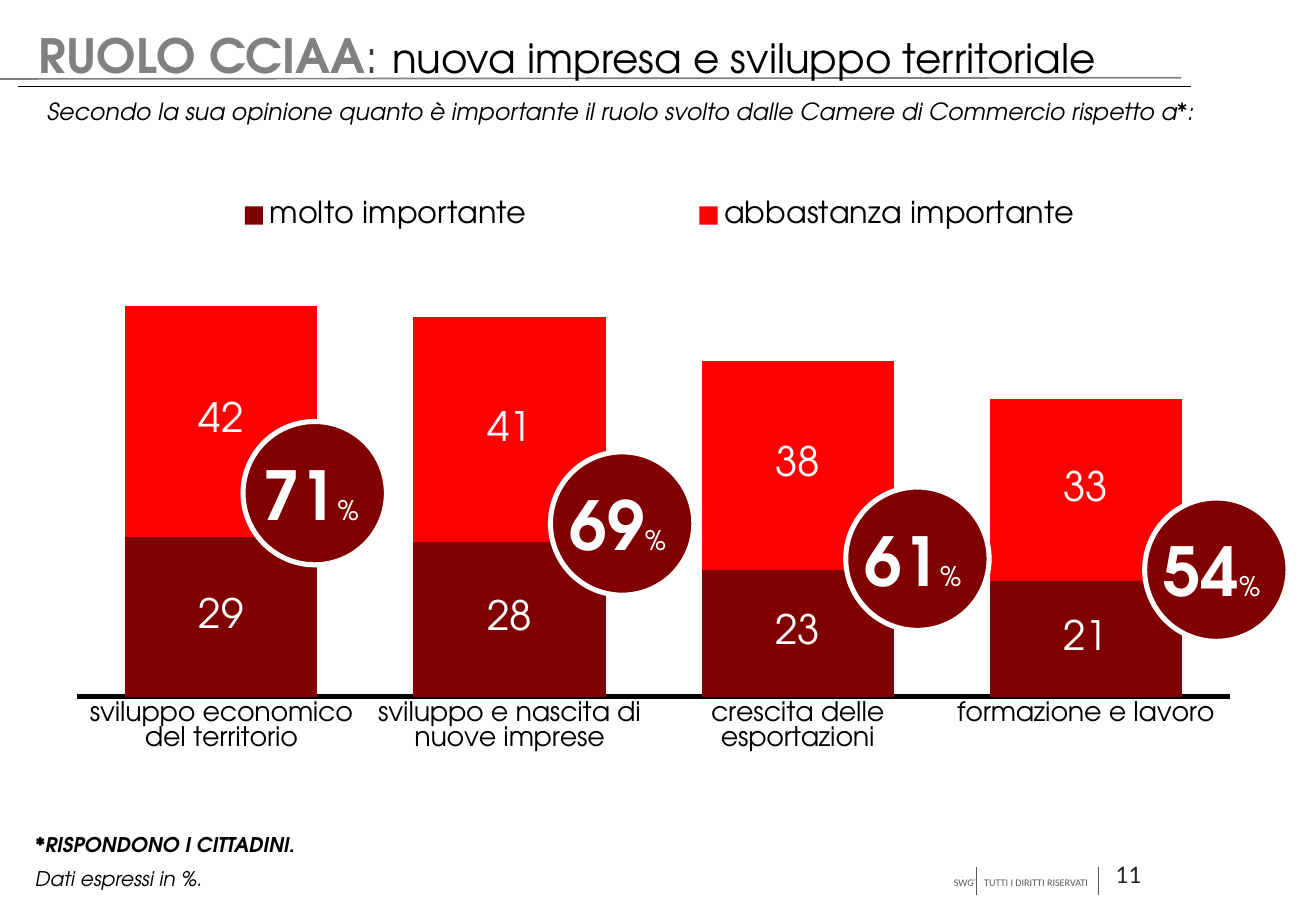
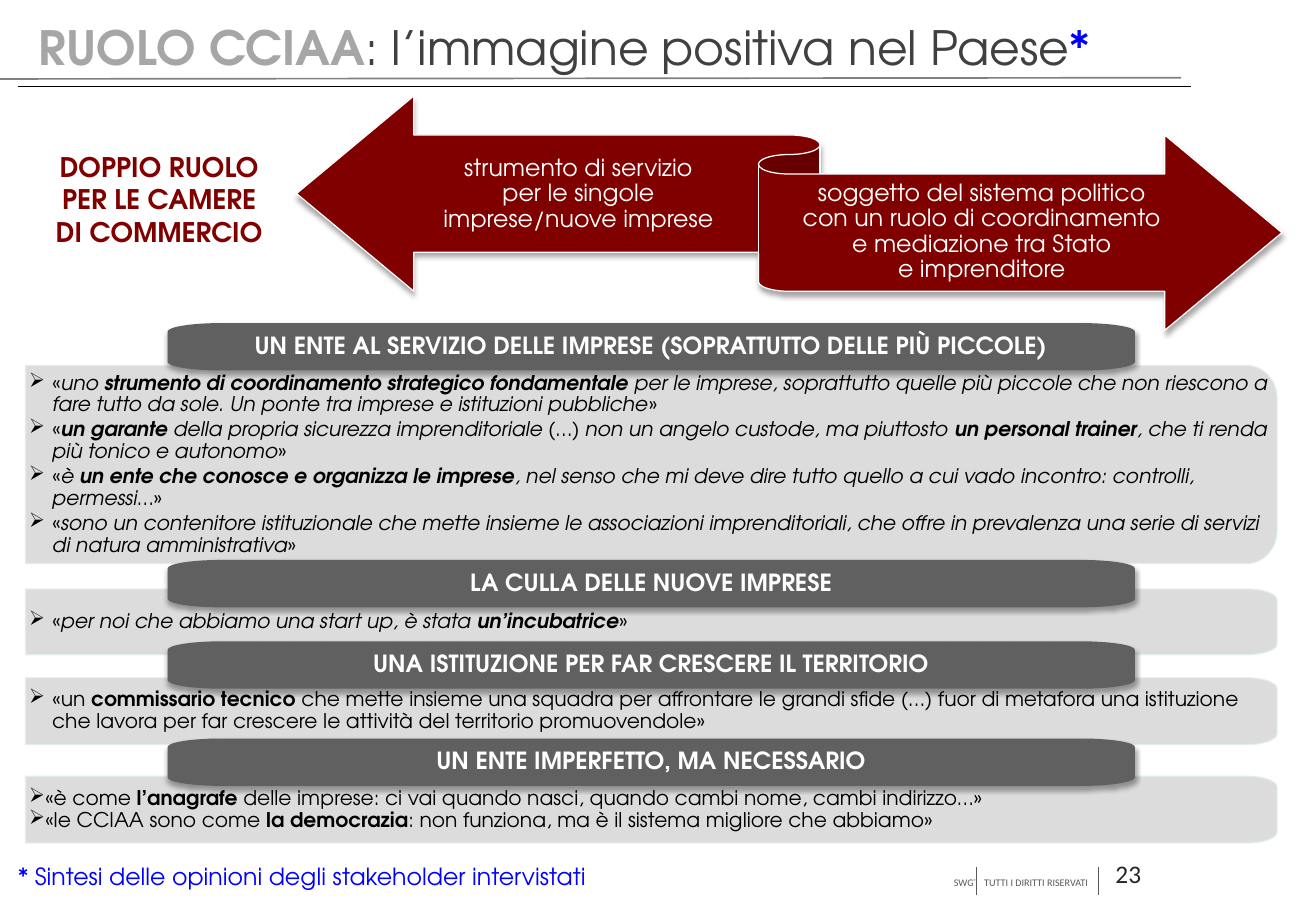
import copy

import lxml.etree
import pptx
import pptx.chart.data
import pptx.dml.color
import pptx.enum.chart
import pptx.enum.shapes
import pptx.enum.text
import pptx.oxml
import pptx.util

PX = 9144  # 100 px to the inch
FONT = "TeX Gyre Adventor"
NS = 'xmlns:a="http://schemas.openxmlformats.org/drawingml/2006/main"'
NSC = 'xmlns:c="http://schemas.openxmlformats.org/drawingml/2006/chart"'
COLORS = {"black": "000000", "white": "FFFFFF", "dark_red": "800000", "red": "FF0000",
          "blue": "0000FF", "title": "404040", "gray": "808080", "light_gray": "A6A6A6",
          "footer": "595959", "number": "262626", "heading": "606060",
          "panel": "D9D9D9", "panel_edge": "E2EEEF"}
RGB = {k: pptx.dml.color.RGBColor.from_string(v) for k, v in COLORS.items()}
ALIGN = pptx.enum.text.PP_ALIGN
ANCHOR = pptx.enum.text.MSO_ANCHOR
SHAPE = pptx.enum.shapes.MSO_SHAPE
B, I, BI = {"bold": True}, {"italic": True}, {"bold": True, "italic": True}
SHADOW = (f'<a:outerShdw {NS} blurRad="40000" dist="23000" dir="5400000" rotWithShape="0">'
          '<a:srgbClr val="000000"><a:alpha val="35000"/></a:srgbClr></a:outerShdw>')


def write(sp, paras, size, color="black", font=FONT, inset=(10, 5, 10, 5), align=ALIGN.LEFT,
          anchor=ANCHOR.TOP, spacing=None, after=0, indent=None):
    """Fill a shape with paragraphs, each a list of (text, format) runs."""
    tf = sp.text_frame
    tf.word_wrap, tf.vertical_anchor = True, anchor
    for side, px in zip(("left", "top", "right", "bottom"), inset):
        setattr(tf, "margin_" + side, px * PX)
    for i, runs in enumerate(paras):
        p = tf.paragraphs[0] if i == 0 else tf.add_paragraph()
        p.alignment, p.space_after = align, pptx.util.Pt(after)
        if spacing:
            p.line_spacing = spacing
        if indent:
            pPr = p._p.get_or_add_pPr()
            pPr.set("marL", str(indent * PX))
            pPr.set("indent", str(-19 * PX))
            pPr.append(pptx.oxml.parse_xml(f'<a:buFont {NS} typeface="Wingdings" charset="2"/>'))
            pPr.append(pptx.oxml.parse_xml(f'<a:buChar {NS} char="Ø"/>'))
        for text, fmt in runs:
            values = {"name": font, "size": size, "color": color, "bold": False,
                      "italic": False, **fmt}
            for n, line in enumerate(text.split("\n")):
                if n:
                    p.add_line_break()
                    p._p[-1].insert(0, copy.deepcopy(r._r.get_or_add_rPr()))
                r = p.add_run()
                r.text = line
                for key, value in values.items():
                    if key == "color":
                        r.font.color.rgb = RGB[value]
                    else:
                        setattr(r.font, key, pptx.util.Pt(value) if key == "size" else value)


def outline(s, x, y, w, h, rx=0, ry=0, corners=(), fill=None):
    """Draw a box whose listed corners (0 = bottom right, clockwise) are elliptical."""
    pts, curves = [], {}
    for k, (cx, cy) in enumerate([(x + w, y + h), (x, y + h), (x, y), (x + w, y)]):
        if k not in corners:
            pts.append((cx, cy))
            continue
        beside = (cx - rx if k in (0, 3) else cx + rx, cy)
        above = (cx, cy - ry if k in (0, 1) else cy + ry)
        pts += [above, beside] if k in (0, 2) else [beside, above]
        curves[len(pts) - 1] = (cx, cy)
    fb = s.shapes.build_freeform(pts[0][0] * PX, pts[0][1] * PX)
    fb.add_line_segments([(a * PX, b * PX) for a, b in pts[1:]])
    sp = fb.convert_to_shape()
    segments = list(sp._element.spPr.find(".//" + pptx.oxml.ns.qn("a:path")))
    for i, (cx, cy) in curves.items():
        (x1, y1), (x2, y2) = pts[i - 1], pts[i]
        bezier = [(x1 + 0.55 * (cx - x1), y1 + 0.55 * (cy - y1)),
                  (x2 + 0.55 * (cx - x2), y2 + 0.55 * (cy - y2)), (x2, y2)]
        marks = "".join(f'<a:pt x="{round((a - x) * PX)}" y="{round((b - y) * PX)}"/>'
                        for a, b in bezier)
        segments[i].getparent().replace(segments[i], pptx.oxml.parse_xml(
            f"<a:cubicBezTo {NS}>{marks}</a:cubicBezTo>"))
    sp.shadow.inherit = False
    sp.line.fill.background()
    if fill:
        sp.fill.solid()
        sp.fill.fore_color.rgb = RGB[fill]
    else:
        sp.fill.background()
    return sp


prs = pptx.Presentation()
prs.slide_width, prs.slide_height = 1083 * PX, 750 * PX

# Shared lines, titles and footers
titles = [
    ("11", 22, [("RUOLO CCIAA", {"color": "gray", "bold": True}), (": ", {}),
                ("nuova impresa e sviluppo territoriale", {"size": 24, "color": "black"})]),
    ("23", 15, [("RUOLO CCIAA", {"color": "light_gray", "bold": True}),
                (": l’immagine positiva nel Paese", {}), ("*", {"color": "blue"})]),
]
rules = [(15, 71, 980, 71, "black", 0.25), (0, 65, 972, 64, "gray", 1),
         (803, 714, 803, 737, "footer", 0.2), (904, 714, 904, 737, "footer", 0.2)]
slides = []
for number, top, title in titles:
    s = prs.slides.add_slide(prs.slide_layouts[6])
    slides.append(s)
    for x1, y1, x2, y2, color, width in rules:
        ln = s.shapes.add_connector(pptx.enum.shapes.MSO_CONNECTOR.STRAIGHT,
                                    x1 * PX, y1 * PX, x2 * PX, y2 * PX)
        ln.line.color.rgb, ln.line.width = RGB[color], pptx.util.Pt(width)
        lxml.etree.SubElement(ln._element.spPr, pptx.oxml.ns.qn("a:effectLst"))
    sp = s.shapes.add_textbox(758 * PX, 717 * PX, 147 * PX, 20 * PX)
    write(sp, [[("SWG", {}), ("®", {}), ("\tTUTTI I DIRITTI RISERVATI", {})]], 6, "footer",
          "Calibri", (27, 5, 0, 5))
    p = sp.text_frame.paragraphs[0]
    p.runs[1]._r.get_or_add_rPr().set("baseline", "30000")
    p._p.get_or_add_pPr().append(pptx.oxml.parse_xml(
        f'<a:tabLst {NS}><a:tab pos="{25 * PX}" algn="l"/></a:tabLst>'))
    sp = s.shapes.add_textbox(896 * PX, 702 * PX, 65 * PX, 35 * PX)
    write(sp, [[(number, {})]], 15, "number", "Calibri", align=ALIGN.CENTER)
    sp = s.shapes.add_textbox(32 * PX, top * PX, 993 * PX, 49 * PX)
    write(sp, [title], 28, "title", inset=(0, 0, 0, 0))

# Slide 1: question and notes
s = slides[0]
question = ("Secondo la sua opinione quanto è importante il ruolo svolto dalle "
            "Camere di Commercio rispetto a*:")
for x, y, w, h, text, size, fmt, inset in [
        (29, 75, 976, 34, question, 14, I, (10, 5, 10, 5)),
        (19, 708, 760, 30, "Dati espressi in %.", 12, I, (10, 5, 10, 5)),
        (29, 685, 451, 20, "*RISPONDONO I CITTADINI.", 12, BI, (0, 0, 0, 0))]:
    write(s.shapes.add_textbox(x * PX, y * PX, w * PX, h * PX), [[(text, fmt)]], size,
          inset=inset)

# Slide 1: stacked columns
cd = pptx.chart.data.CategoryChartData()
cd.categories = ["sviluppo economico del territorio", "sviluppo e nascita di nuove imprese",
                 "crescita delle esportazioni", "formazione e lavoro"]
cd.add_series("molto importante", (29, 28, 23, 21))
cd.add_series("abbastanza importante", (42, 41, 38, 33))
chart = s.shapes.add_chart(pptx.enum.chart.XL_CHART_TYPE.COLUMN_STACKED,
                           46 * PX, 144 * PX, 985 * PX, 500 * PX, cd).chart
chart.has_title = False
chart.has_legend = True
chart.legend.position = pptx.enum.chart.XL_LEGEND_POSITION.TOP
chart.legend.include_in_layout = False
plot = chart.plots[0]
plot.gap_width, plot.overlap, plot.vary_by_categories = 50, 100, False
cat, val = chart.category_axis, chart.value_axis
cat.major_tick_mark = pptx.enum.chart.XL_TICK_MARK.NONE
cat.format.line.color.rgb, cat.format.line.width = RGB["black"], pptx.util.Pt(3)
val.minimum_scale, val.maximum_scale = 0, 80
val.has_major_gridlines = val.visible = False
fonts = [(chart.font, 18, "black", "Arial"), (chart.legend.font, 18, "black", FONT),
         (cat.tick_labels.font, 16, "black", FONT)]
for series, color in zip(plot.series, ("dark_red", "red")):
    series.format.fill.solid()
    series.format.fill.fore_color.rgb = RGB[color]
    series.data_labels.show_value = True
    fonts.append((series.data_labels.font, 24, "white", FONT))
for font, size, color, name in fonts:
    font.size, font.name, font.color.rgb = pptx.util.Pt(size), name, RGB[color]

# Slide 1: manual places of plot and legend
for tag, index, target, box in [("plotArea", 0, "inner", (0.018, 0.134, 0.963, 0.725)),
                                ("legend", 1, None, (0.022, 0.012, 0.965, 0.11))]:
    el = chart._chartSpace.find(".//" + pptx.oxml.ns.qn("c:" + tag))
    for old in el.findall(pptx.oxml.ns.qn("c:layout")):
        el.remove(old)
    inner = f'<c:layoutTarget val="{target}"/>' if target else ""
    inner += '<c:xMode val="edge"/><c:yMode val="edge"/>'
    inner += "".join(f'<c:{k} val="{v}"/>' for k, v in zip("xywh", box))
    el.insert(index, pptx.oxml.parse_xml(
        f"<c:layout {NSC}><c:manualLayout>{inner}</c:manualLayout></c:layout>"))

# Slide 1: totals
for x, y, total in [(453, 372, "69"), (200, 347, "71"), (696, 401, "61"), (942, 410, "54")]:
    sp = s.shapes.add_shape(SHAPE.OVAL, x * PX, y * PX, 118 * PX, 118 * PX)
    sp.shadow.inherit = False
    sp.fill.solid()
    sp.fill.fore_color.rgb = RGB["dark_red"]
    sp.line.color.rgb, sp.line.width = RGB["white"], pptx.util.Pt(3)
    write(s.shapes.add_textbox((x + 6) * PX, (y + 21) * PX, 106 * PX, 77 * PX),
          [[(total, B), ("%", {"size": 16})]], 40, "white")

# Slide 2: double role ribbon
s = slides[1]
write(s.shapes.add_textbox(29 * PX, 124 * PX, 204 * PX, 81 * PX),
      [[("DOPPIO RUOLO PER LE CAMERE\nDI COMMERCIO", B)]], 16, "dark_red",
      inset=(0, 0, 0, 0), align=ALIGN.CENTER)
sp = s.shapes.add_shape(SHAPE.LEFT_RIGHT_RIBBON, 244 * PX, 79 * PX, 811 * PX, 193 * PX)
sp.shadow.inherit = False
sp.fill.solid()
sp.fill.fore_color.rgb = RGB["dark_red"]
sp.line.color.rgb, sp.line.width = RGB["white"], pptx.util.Pt(0.75)
sp._element.spPr.find(pptx.oxml.ns.qn("a:effectLst")).append(pptx.oxml.parse_xml(SHADOW))
for x, y, w, text in [
        (342, 113, 268, "strumento di servizio\nper le singole imprese/nuove imprese"),
        (650, 144, 316, "soggetto del sistema politico\ncon un ruolo di coordinamento\n"
                        "e mediazione tra Stato\ne imprenditore")]:
    write(outline(s, x, y, w, 95), [[(text, {})]], 14, "white",
          inset=(0, 6, 0, 7), align=ALIGN.CENTER, anchor=ANCHOR.MIDDLE, spacing=0.9)

# Slide 2: quotes under their headings
sections = [
    ("UN ENTE AL SERVIZIO DELLE IMPRESE (SOPRATTUTTO DELLE PIÙ PICCOLE)",
     266, 301, 163, 27, 19, 1.8, [
         [("«", {}), ("uno ", I), ("strumento di coordinamento strategico fondamentale ", BI),
          ("per le imprese, soprattutto quelle più piccole che non riescono a fare tutto "
           "da sole. Un ponte tra imprese e istituzioni pubbliche", I), ("»", {})],
         [("«", {}), ("un garante ", BI),
          ("della propria sicurezza imprenditoriale (…) non un angelo custode, "
           "ma piuttosto ", I),
          ("un personal trainer", BI), (", che ti renda più tonico e autonomo", I), ("»", {})],
         [("«", {}), ("è ", I), ("un ente che conosce e organizza le imprese", BI),
          (", nel senso che mi deve dire tutto quello a cui vado incontro: controlli, "
           "permessi…", I), ("»", {})],
         [("«", {}),
          ("sono un contenitore istituzionale che mette insieme le associazioni "
           "imprenditoriali, che offre in prevalenza una serie di servizi di natura "
           "amministrativa", I), ("»", {})]]),
    ("LA CULLA DELLE NUOVE IMPRESE", 461, 485, 54, 9, 19, 1.8, [
        [("«", {}), ("per noi che abbiamo una start up, è stata ", I),
         ("un’incubatrice", BI), ("»", {})]]),
    ("UNA ISTITUZIONE PER FAR CRESCERE IL TERRITORIO", 528, 558, 55, 9, 19, 1.8, [
        [("«un ", {}), ("commissario tecnico ", B),
         ("che mette insieme una squadra per affrontare le grandi sfide (…) fuor di metafora "
          "una istituzione che lavora per far crescere le attività del territorio "
          "promuovendole»", {})]]),
    ("UN ENTE IMPERFETTO, MA NECESSARIO", 608, 639, 55, 9, 12, 0, [
        [("«è come", {}), (" l’anagrafe ", B),
         ("delle imprese: ci vai quando nasci, quando cambi nome, cambi indirizzo…»", {})],
        [("«le CCIAA sono come ", {}), ("la democrazia", B),
         (": non funziona, ma è il sistema migliore che abbiamo»", {})]]),
]
for heading, head_y, y, h, ry, indent, after, quotes in sections:
    sp = outline(s, 21, y, 1030, h, 25, ry, (0, 3), "panel")
    sp.line.color.rgb, sp.line.width = RGB["panel_edge"], pptx.util.Pt(0.75)
    for clr in sp._element.spPr.iter(pptx.oxml.ns.qn("a:srgbClr")):
        clr.append(pptx.oxml.parse_xml(f'<a:alpha {NS} val="90000"/>'))
    write(sp, quotes, 12, inset=(3, 6, 7, 6), anchor=ANCHOR.MIDDLE, spacing=0.9,
          after=after, indent=indent)
    sp = outline(s, 138, head_y, 796, 39, 44, 7, (0, 1, 2, 3), "heading")
    sp._element.spPr.find(pptx.oxml.ns.qn("a:effectLst")).append(pptx.oxml.parse_xml(SHADOW))
    write(sp, [[(heading, B)]], 14, "white", inset=(11, 9, 11, 9), align=ALIGN.CENTER,
          anchor=ANCHOR.MIDDLE, spacing=0.9)

# Slide 2: note
write(s.shapes.add_textbox(15 * PX, 710 * PX, 533 * PX, 24 * PX),
      [[("* Sintesi delle opinioni degli stakeholder intervistati", {})]], 14, "blue",
      inset=(0, 0, 0, 0))

prs.save("out.pptx")
